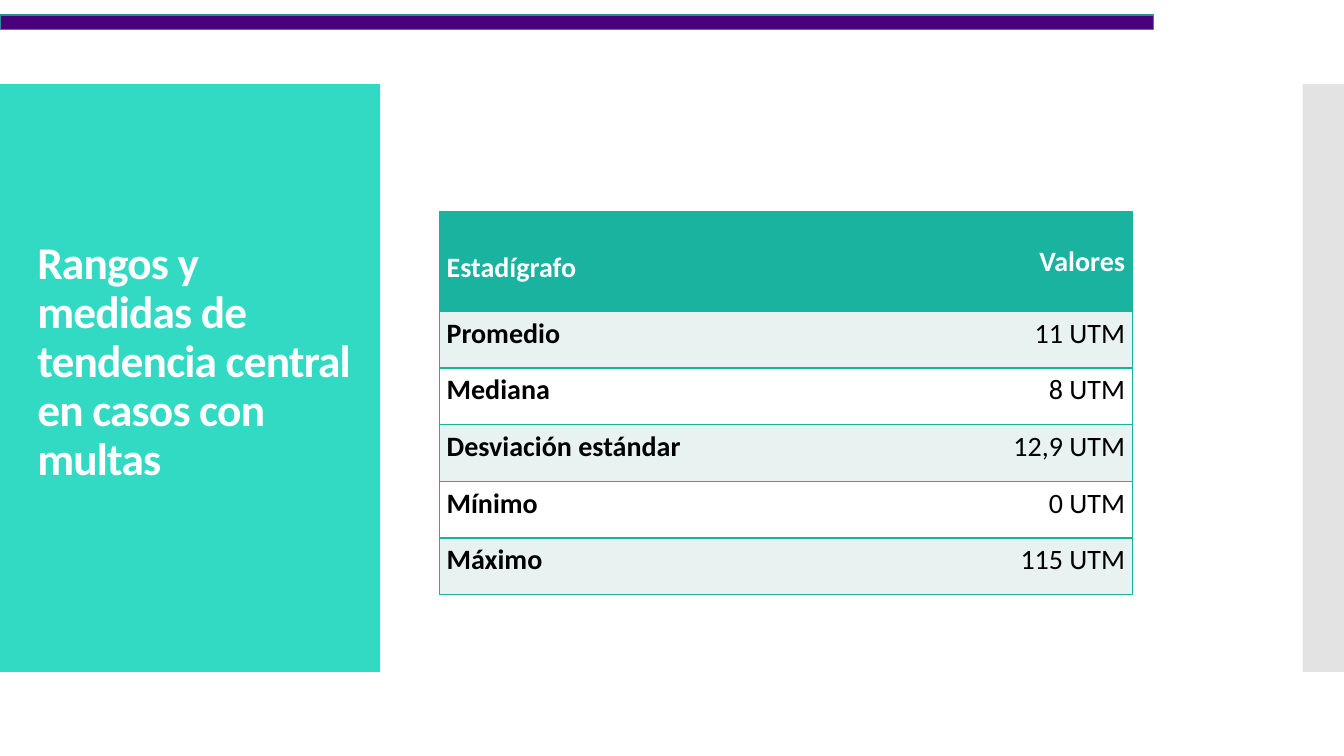
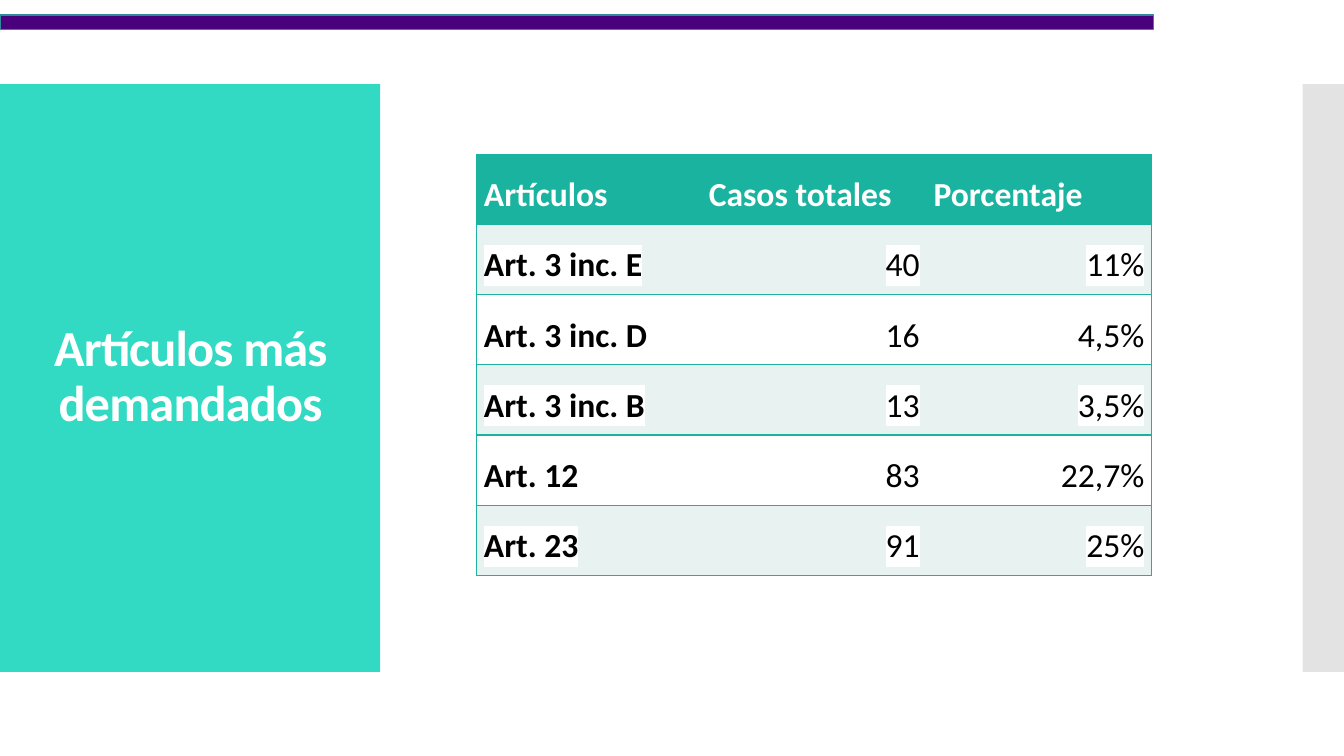
from lxml import etree
from pptx import Presentation
from pptx import util as u
from pptx.dml.color import RGBColor
from pptx.enum import shapes, text
from pptx.oxml.ns import qn

W, H = 13.33, 7.5
FONT = "Calibri"
WHITE, BLACK = "FFFFFF", "000000"
TURQUOISE, GREEN, PALE = "32DAC4", "1AB39F", "E8F2F0"
PURPLE, BLUE, GREY = "4A017C", "2F8A9B", "C8C8C8"
JUSTIFY, RIGHT = text.PP_ALIGN.JUSTIFY, text.PP_ALIGN.RIGHT


def rgb(value):
    return RGBColor.from_string(value)


def style(p, size, colour, bold, align, spacing):
    p.alignment, p.line_spacing = align, spacing
    p.font.name, p.font.size, p.font.bold = FONT, u.Pt(size), bold
    p.font.color.rgb = rgb(colour)


def rect(slide, box, fill, line=None, alpha=None):
    sp = slide.shapes.add_shape(shapes.MSO_SHAPE.RECTANGLE, *map(u.Inches, box))
    sp.shadow.inherit = False
    sp.fill.solid()
    sp.fill.fore_color.rgb = rgb(fill)
    if alpha:
        colour = sp._element.spPr.find(".//" + qn("a:srgbClr"))
        etree.SubElement(colour, qn("a:alpha"), val=str(alpha * 1000))
    if line:
        sp.line.color.rgb = rgb(line)
        sp.line.width = u.Pt(0.85)
    else:
        sp.line.fill.background()


def add_slide(prs, title, box, size, align):
    """Slide with the shared bands and a title on the left panel."""
    slide = prs.slides.add_slide(prs.slide_layouts[5])
    top, height = H / 9, H * 7 / 9
    rect(slide, (0, top, 3.77, height), TURQUOISE)
    rect(slide, (W - 0.41, top, 0.41, height), GREY, alpha=50)
    rect(slide, (0, 0.15, 11.44, 0.14), PURPLE, line=BLUE)

    # Title, brought in front of the bands
    sp = slide.shapes.title
    slide.shapes._spTree.append(sp._element)
    sp.left, sp.top, sp.width, sp.height = map(u.Inches, box)
    tf = sp.text_frame
    tf.text = title
    tf.word_wrap, tf.auto_size = True, text.MSO_AUTO_SIZE.NONE
    tf.vertical_anchor = text.MSO_ANCHOR.MIDDLE
    p = tf.paragraphs[0]
    style(p, size, WHITE, True, align, 0.9)
    p.runs[0].font._element.set("spc", "-60")
    return slide


def set_borders(cell, first, last):
    """Green rules above and below, and at the outer sides only."""
    tcPr = cell._tc.get_or_add_tcPr()
    sides = (("a:lnL", first), ("a:lnR", last), ("a:lnT", True), ("a:lnB", True))
    for i, (tag, visible) in enumerate(sides):
        ln = etree.Element(qn(tag), w=str(u.Pt(1)))
        if visible:
            fill = etree.SubElement(ln, qn("a:solidFill"))
            etree.SubElement(fill, qn("a:srgbClr"), val=GREEN)
        else:
            etree.SubElement(ln, qn("a:noFill"))
        tcPr.insert(i, ln)


def add_table(slide, box, rows, size, header_height=None, spacing=1.0,
              inset=0.05, header_align=JUSTIFY, highlight=False):
    """Table of equal columns; the body rows share the height left over."""
    n_rows, n_cols = len(rows), len(rows[0])
    header_height = header_height or box[3] / n_rows
    row_height = (box[3] - header_height) / (n_rows - 1)
    table = slide.shapes.add_table(n_rows, n_cols, *map(u.Inches, box)).table
    table.horz_banding = False
    for column in table.columns:
        column.width = u.Inches(box[2] / n_cols)

    for r, row in enumerate(rows):
        table.rows[r].height = u.Inches(row_height if r else header_height)
        for c, words in enumerate(row):
            cell = table.cell(r, c)
            cell.text = words
            cell.margin_left = cell.margin_right = u.Inches(0.07)
            cell.margin_top = cell.margin_bottom = u.Inches(inset)
            cell.fill.solid()
            cell.fill.fore_color.rgb = rgb((PALE if r % 2 else WHITE) if r else GREEN)
            set_borders(cell, c == 0, c == n_cols - 1)
            p = cell.text_frame.paragraphs[0]
            align = JUSTIFY if c == 0 else RIGHT if r else header_align
            style(p, size, BLACK if r else WHITE, r == 0 or c == 0, align, spacing)
            if highlight and r:
                mark = etree.SubElement(p.runs[0].font._element, qn("a:highlight"))
                etree.SubElement(mark, qn("a:srgbClr"), val=WHITE)
    return table


def fines_slide(prs):
    slide = add_slide(prs, "Rangos y medidas de tendencia central en casos con multas",
                      (0.27, 2.83, 3.4, 1.53), 32.4, text.PP_ALIGN.LEFT)
    rows = [("Estadígrafo", "Valores"),
            ("Promedio", "11 UTM"),
            ("Mediana", "8 UTM"),
            ("Desviación estándar", "12,9 UTM"),
            ("Mínimo", "0 UTM"),
            ("Máximo", "115 UTM")]
    table = add_table(slide, (4.36, 2.1, 6.87, 3.8), rows, 20,
                      header_height=0.99, header_align=RIGHT)
    # The first heading sits one line lower
    table.cell(0, 0).margin_top = u.Inches(0.39)
    table.cell(0, 1).vertical_anchor = text.MSO_ANCHOR.MIDDLE


def articles_slide(prs):
    slide = add_slide(prs, "Artículos más demandados",
                      (0.28, 1.23, 3.22, 5.03), 36, text.PP_ALIGN.CENTER)
    rows = [("Artículos", "Casos totales", "Porcentaje"),
            ("Art. 3 inc. E", "40", "11%"),
            ("Art. 3 inc. D", "16", "4,5%"),
            ("Art. 3 inc. B", "13", "3,5%"),
            ("Art. 12", "83", "22,7%"),
            ("Art. 23", "91", "25%")]
    add_table(slide, (4.73, 1.53, 6.69, 4.18), rows, 24,
              spacing=1.5, inset=0, highlight=True)


def main():
    prs = Presentation()
    prs.slide_width, prs.slide_height = u.Inches(W), u.Inches(H)
    fines_slide(prs)
    articles_slide(prs)
    prs.save("out.pptx")


if __name__ == "__main__":
    main()
